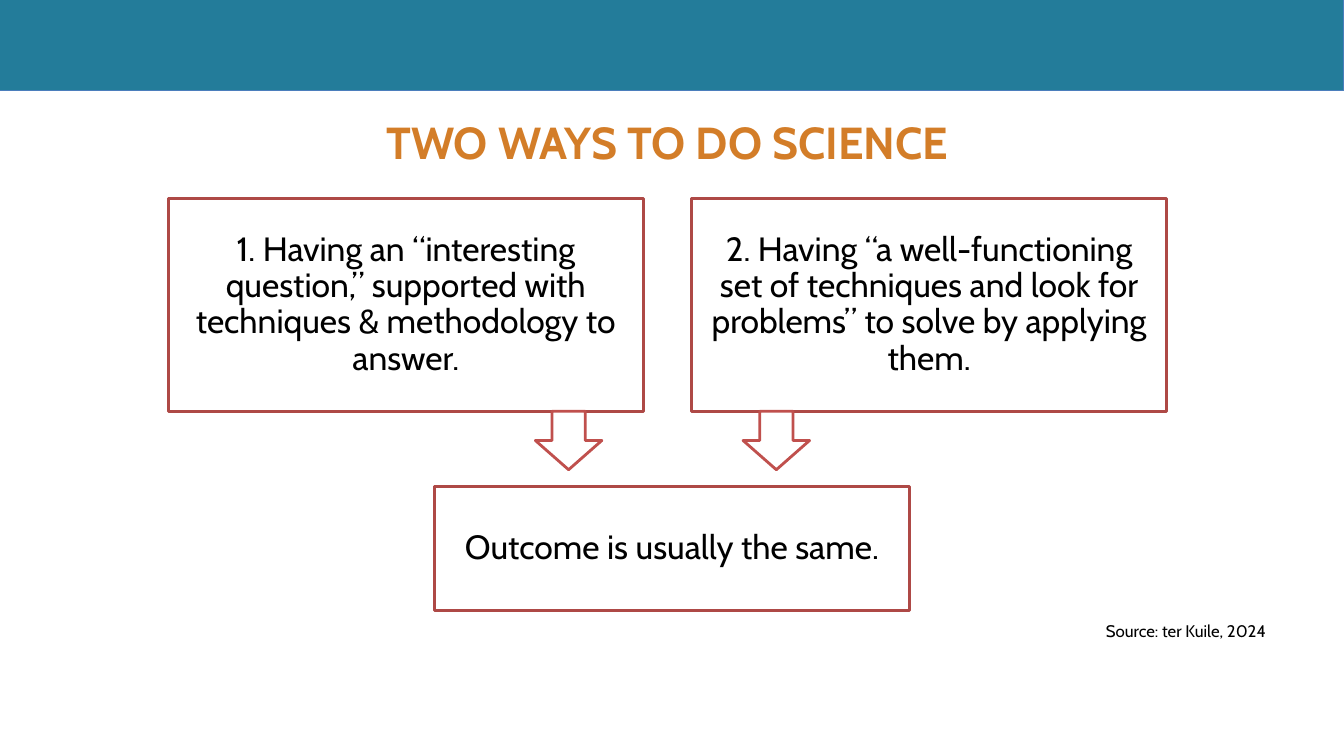
from dataclasses import dataclass

from pptx import Presentation
from pptx.dml.color import RGBColor as RGB
from pptx.enum.shapes import MSO_SHAPE as Shape
from pptx.enum.text import MSO_ANCHOR as Anchor, MSO_AUTO_SIZE as Fit, PP_ALIGN as Align
from pptx.util import Inches, Pt


@dataclass(frozen=True)
class Theme:
    font: str = "Cabin"
    white: str = "FFFFFF"
    black: str = "000000"
    teal: str = "237C9A"
    blue: str = "4B7EBC"
    orange: str = "D37D28"
    red: str = "AE4946"
    coral: str = "C0504D"
    title: int = 32
    body: int = 24
    small: int = 12


class Deck:
    def __init__(self, theme):
        self.theme = theme
        self.prs = Presentation()
        self.prs.slide_width = Inches(13.33)
        self.prs.slide_height = Inches(7.5)
        self.slide = self.prs.slides.add_slide(self.prs.slide_layouts[5])

    def label(self, frame, text, size, color, align, bold=False):
        para = frame.paragraphs[0]
        para.alignment = align
        run = para.add_run()
        run.text = text
        font = run.font
        font.name, font.size, font.bold = self.theme.font, Pt(size), bold
        font.color.rgb = RGB.from_string(color)
        return para

    def shape(self, kind, area, fill, line, width):
        item = self.slide.shapes.add_shape(kind, *map(Inches, area))
        item.shadow.inherit = False
        item.fill.solid()
        item.fill.fore_color.rgb = RGB.from_string(fill)
        item.line.color.rgb = RGB.from_string(line)
        item.line.width = Pt(width)
        return item

    def title(self, text, area):
        item = self.slide.shapes.title
        item.left, item.top, item.width, item.height = map(Inches, area)
        frame = item.text_frame
        frame.word_wrap, frame.auto_size = True, Fit.NONE
        frame.vertical_anchor = Anchor.TOP
        frame.margin_bottom = 0
        self.label(frame, text, self.theme.title, self.theme.orange, Align.CENTER, True)

    def box(self, text, area):
        look = self.theme
        item = self.shape(Shape.RECTANGLE, area, look.white, look.red, 2)
        frame = item.text_frame
        frame.word_wrap = True
        frame.vertical_anchor = Anchor.MIDDLE
        frame.margin_left = frame.margin_right = Inches(0.1)
        frame.margin_top = frame.margin_bottom = Inches(0.1)
        para = self.label(frame, text, look.body, look.black, Align.CENTER)
        para.line_spacing = 0.9

    def arrow(self, area):
        self.shape(Shape.DOWN_ARROW, area, self.theme.white, self.theme.coral, 2)

    def note(self, text, area):
        frame = self.slide.shapes.add_textbox(*map(Inches, area)).text_frame
        frame.word_wrap, frame.auto_size = True, Fit.SHAPE_TO_FIT_TEXT
        self.label(frame, text, self.theme.small, self.theme.black, Align.LEFT)


def main():
    look = Theme()
    deck = Deck(look)

    # Header band and title
    deck.shape(Shape.RECTANGLE, (0, 0, 13.33, 0.9), look.teal, look.blue, 0.75)
    deck.title("TWO WAYS TO DO SCIENCE", (0.62, 1.09, 12, 0.65))

    # The two ways, side by side
    wide, tall, top = 4.71, 2.11, 1.97
    ways = (
        "1. Having an “interesting question,” supported with techniques"
        " & methodology to answer.",
        "2. Having “a well-functioning set of techniques and look for"
        " problems” to solve by applying them.",
    )
    for col, text in enumerate(ways):
        deck.box(text, (1.67 + col * 5.19, top, wide, tall))

    # Shared outcome
    deck.box("Outcome is usually the same.", (4.31, 4.83, wide, 1.23))

    # Arrows from the ways to the outcome
    for left in (5.31, 7.37):
        deck.arrow((left, top + tall, 0.66, 0.58))

    # Source line
    deck.note("Source: ter Kuile, 2024", (10.87, 6.11, 2.35, 0.3))

    deck.prs.save("out.pptx")


if __name__ == "__main__":
    main()
